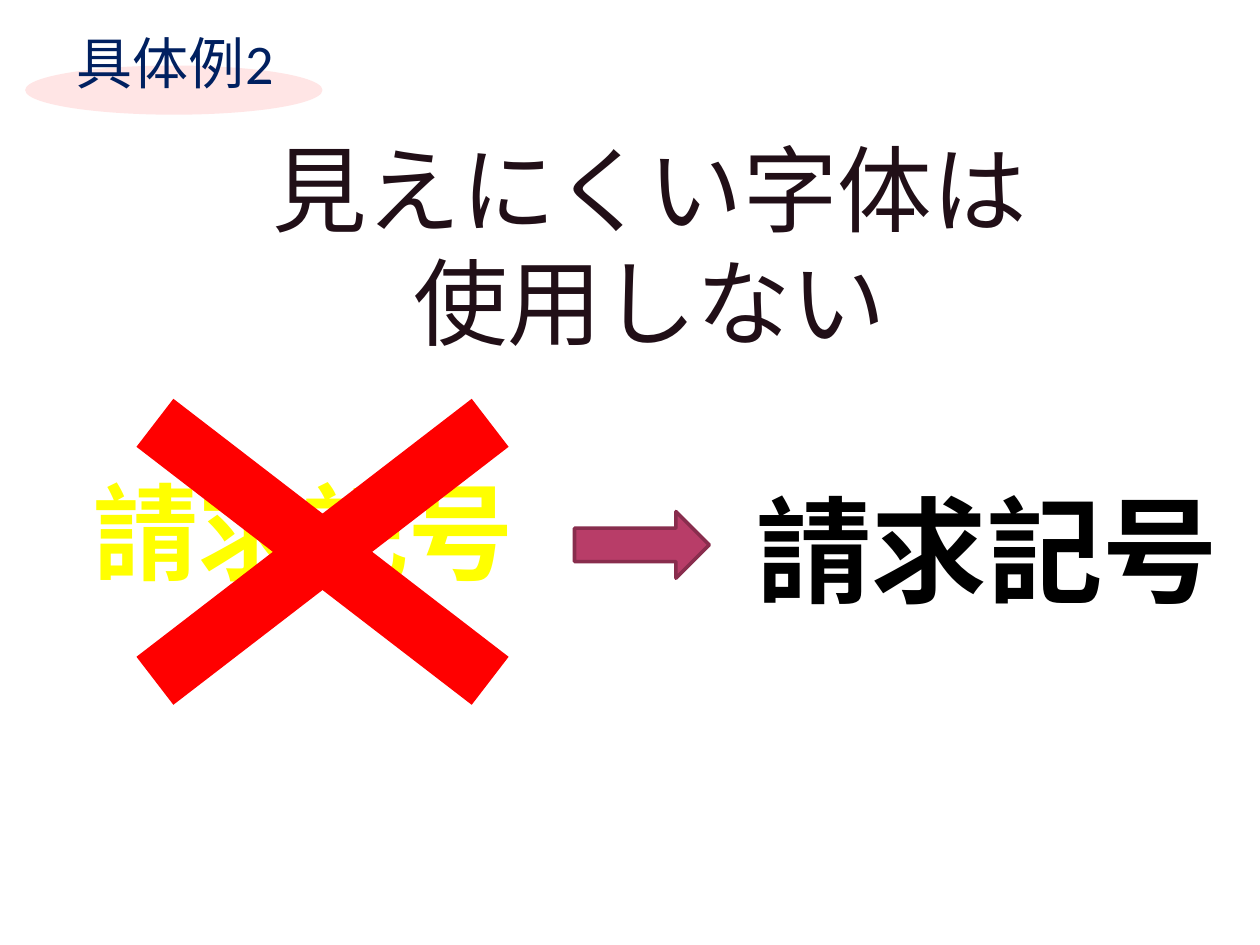
import pptx
import pptx.dml.color
import pptx.enum.shapes
import pptx.enum.text
import pptx.oxml
import pptx.oxml.ns
import pptx.util

Inches = pptx.util.Inches
Pt = pptx.util.Pt
SHAPE = pptx.enum.shapes.MSO_SHAPE
ANCHOR = pptx.enum.text.MSO_ANCHOR

COLORS = {
    "title": "210F17", "label": "002060", "oval": "FFE5E5",
    "arrow": "B83D68", "arrow_line": "882D4D", "cross": "FF0000",
    "bad": "FFFF00", "good": "000000",
}


def rgb(name):
    return pptx.dml.color.RGBColor.from_string(COLORS[name])


def write_text(tf, text, size, color, font="Calibri", bold=False,
               outline=False, anchor=ANCHOR.TOP, grow=True):
    tf.word_wrap = True
    tf.vertical_anchor = anchor
    auto = pptx.enum.text.MSO_AUTO_SIZE
    tf.auto_size = auto.SHAPE_TO_FIT_TEXT if grow else auto.NONE
    for i, line in enumerate(text.split("\n")):
        p = tf.add_paragraph() if i else tf.paragraphs[0]
        p.alignment = pptx.enum.text.PP_ALIGN.CENTER
        r = p.add_run()
        r.text = line
        r.font.size = Pt(size)
        r.font.bold = bold
        r.font.name = font
        r.font.color.rgb = rgb(color)
        rpr = r.font._element
        ea = pptx.oxml.parse_xml(
            f'<a:ea {pptx.oxml.ns.nsdecls("a")} typeface="Calibri"/>')
        rpr.find(pptx.oxml.ns.qn("a:latin")).addnext(ea)
        if outline:
            rpr.insert(0, pptx.oxml.parse_xml(
                f'<a:ln {pptx.oxml.ns.nsdecls("a")} w="{Pt(1)}"><a:solidFill>'
                f'<a:srgbClr val="{COLORS[color]}"/></a:solidFill></a:ln>'))


class SlideBuilder:
    def __init__(self, prs):
        self.s = prs.slides.add_slide(prs.slide_layouts[5])

    def title(self, x, y, w, h, text, **style):
        sp = self.s.shapes.title
        sp.left, sp.top, sp.width, sp.height = map(Inches, (x, y, w, h))
        write_text(sp.text_frame, text, **style)

    def text(self, x, y, w, h, text, **style):
        sp = self.s.shapes.add_textbox(*map(Inches, (x, y, w, h)))
        write_text(sp.text_frame, text, **style)

    def shape(self, kind, x, y, w, h, fill, line=None, adj=None):
        sp = self.s.shapes.add_shape(kind, *map(Inches, (x, y, w, h)))
        sp.shadow.inherit = False
        sp.fill.solid()
        sp.fill.fore_color.rgb = rgb(fill)
        if line:
            sp.line.color.rgb = rgb(line)
            sp.line.width = Pt(2)
        else:
            sp.line.fill.background()
        if adj is not None:
            sp.adjustments[0] = adj


def main():
    prs = pptx.Presentation()
    prs.slide_width, prs.slide_height = Inches(10), Inches(7.5)
    b = SlideBuilder(prs)
    b.title(1.14, 0.99, 8.03, 1.92, "見えにくい字体は\n使用しない",
            size=54, color="title")
    b.shape(SHAPE.RIGHT_ARROW, 4.56, 4.06, 1.07, 0.53, "arrow", "arrow_line")
    b.text(0.28, 3.66, 4.25, 1.11, "請求記号", size=60, color="bad",
           font="Noto Sans CJK JP", bold=True, outline=True)
    b.text(5.79, 3.75, 4.09, 1.21, "請求記号", size=66, color="good",
           bold=True, outline=True)
    b.shape(SHAPE.MATH_MULTIPLY, 0, 2.41, 5.12, 3.94, "cross", adj=0.122)
    b.shape(SHAPE.OVAL, 0.2, 0.52, 2.36, 0.39, "oval")
    b.text(0.35, 0.2, 1.98, 0.58, " 具体例2", size=32, color="label",
           anchor=ANCHOR.MIDDLE, grow=False)
    prs.save("out.pptx")


if __name__ == "__main__":
    main()
